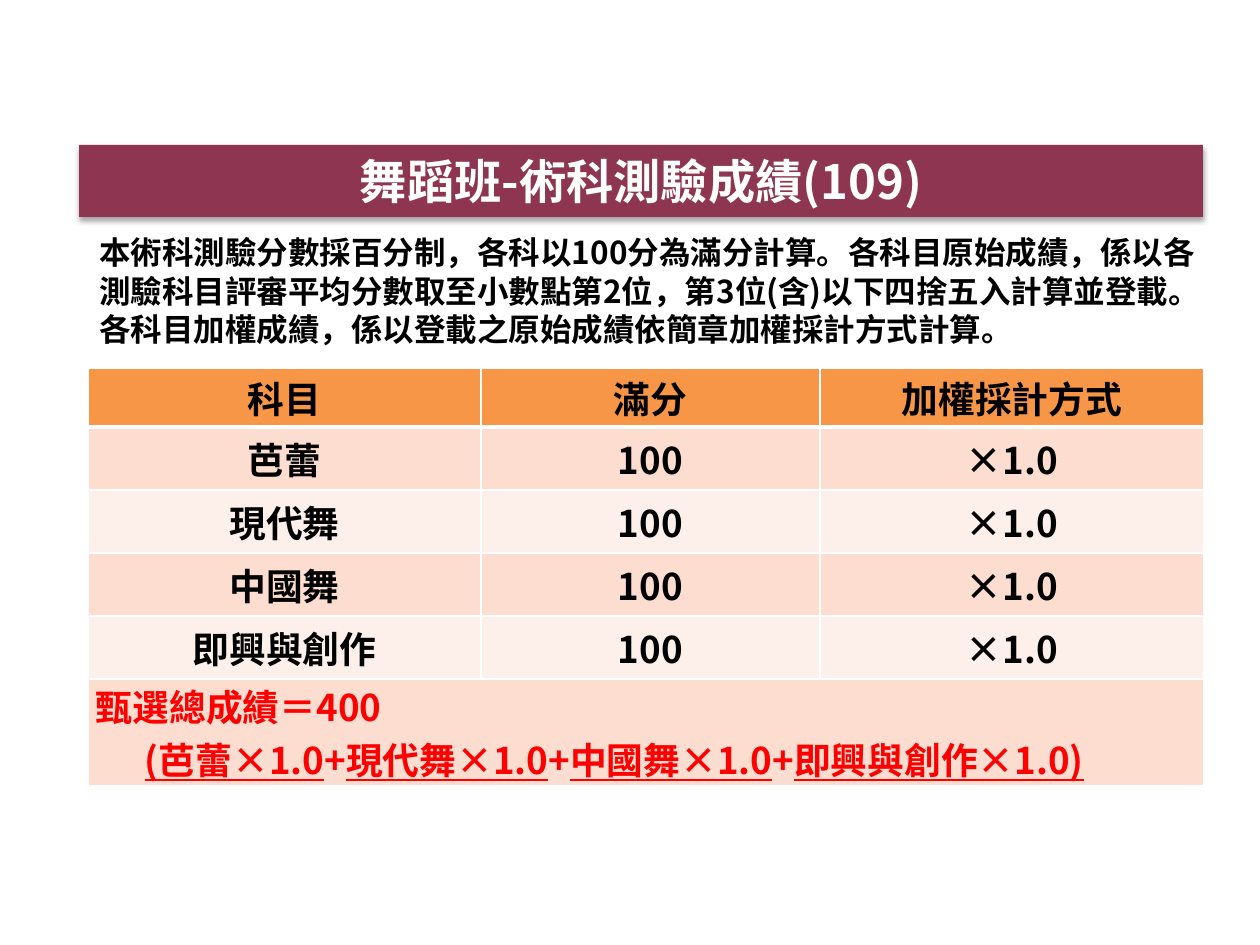
from dataclasses import dataclass

from lxml import etree
from pptx import Presentation
from pptx import util as u
from pptx.dml.color import RGBColor
from pptx.enum import text
from pptx.oxml import parse_xml
from pptx.oxml.ns import nsdecls, qn

EMU_PER_PX = 914400 / 126

TITLE = "舞蹈班-術科測驗成績(109)"
INTRO = (
    "本術科測驗分數採百分制，各科以100分為滿分計算。各科目原始成績，係以"
    "各測驗科目評審平均分數取至小數點第2位，第3位(含)以下四捨五入計算並登載。"
    "各科目加權成績，係以登載之原始成績依簡章加權採計方式計算。"
)
HEADER = ["科目", "滿分", "加權採計方式"]
SUBJECTS = ["芭蕾", "現代舞", "中國舞", "即興與創作"]
FULL_MARK, WEIGHT = "100", "×1.0"


def px(length):
    return u.Emu(round(length * EMU_PER_PX))


def color(hex_string):
    return RGBColor.from_string(hex_string)


@dataclass
class SlideBuilder:
    slide: object
    font: str = "Noto Sans CJK SC"
    black: str = "000000"
    white: str = "FFFFFF"
    red: str = "FF0000"
    banner: str = "8E3651"
    header: str = "F79646"
    bands: tuple = ("FCDDCF", "FDEFE9")

    def format_runs(self, paragraph, size, hex_string):
        for run in paragraph.runs:
            run.font.size = u.Pt(size)
            run.font.bold = True
            run.font.color.rgb = color(hex_string)
            run.font.name = self.font
            east_asian = etree.SubElement(run.font._element, qn("a:ea"))
            east_asian.set("typeface", self.font)

    def add_title(self, wording, left, top, width, height):
        title = self.slide.shapes.title
        title.left, title.top, title.width, title.height = map(px, (left, top, width, height))
        title.fill.solid()
        title.fill.fore_color.rgb = color(self.banner)
        title._element.spPr.append(parse_xml(
            f'<a:effectLst {nsdecls("a")}>'
            '<a:outerShdw blurRad="39370" dist="22860" dir="5400000" rotWithShape="0">'
            '<a:srgbClr val="000000"><a:alpha val="35000"/></a:srgbClr>'
            '</a:outerShdw></a:effectLst>'))
        frame = title.text_frame
        frame.text = wording
        frame.auto_size = text.MSO_AUTO_SIZE.NONE
        frame.vertical_anchor = text.MSO_ANCHOR.MIDDLE
        frame.paragraphs[0].alignment = text.PP_ALIGN.CENTER
        self.format_runs(frame.paragraphs[0], 27, self.white)

    def add_text(self, wording, left, top, width, height):
        box = self.slide.shapes.add_textbox(*map(px, (left, top, width, height)))
        frame = box.text_frame
        frame.word_wrap = True
        frame.text = wording
        frame.paragraphs[0].line_spacing = u.Pt(21.8)
        self.format_runs(frame.paragraphs[0], 18, self.black)

    def add_table(self, rows, left, top, column_widths, row_heights):
        """Add a header and banded rows; the last row is left empty and merged."""
        table = self.slide.shapes.add_table(
            len(row_heights), len(column_widths), px(left), px(top),
            px(sum(column_widths)), px(sum(row_heights))).table
        for column, width in zip(table.columns, column_widths):
            column.width = px(width)
        for index, height in enumerate(row_heights):
            table.rows[index].height = px(height)
            fill = self.bands[(index - 1) % 2] if index else self.header
            for cell in table.rows[index].cells:
                self.style_cell(cell, fill, bottom=1 if index else 3)
        for index, values in enumerate(rows):
            for cell, value in zip(table.rows[index].cells, values):
                cell.text = value
                paragraph = cell.text_frame.paragraphs[0]
                paragraph.alignment = text.PP_ALIGN.CENTER
                self.format_runs(paragraph, 21, self.black)
        last = len(row_heights) - 1
        table.cell(last, 0).merge(table.cell(last, len(column_widths) - 1))
        return table.cell(last, 0)

    def style_cell(self, cell, fill, bottom):
        cell.vertical_anchor = text.MSO_ANCHOR.MIDDLE
        cell.margin_left = cell.margin_right = px(8)
        cell.margin_top = cell.margin_bottom = 0
        properties = cell._tc.get_or_add_tcPr()
        for side, points in (("L", 1), ("R", 1), ("T", 1), ("B", bottom)):
            properties.append(parse_xml(
                f'<a:ln{side} {nsdecls("a")} w="{u.Pt(points)}"><a:solidFill>'
                f'<a:srgbClr val="{self.white}"/></a:solidFill></a:ln{side}>'))
        cell.fill.solid()
        cell.fill.fore_color.rgb = color(fill)

    def add_formula(self, cell, heading, terms, indent):
        """Write a heading line, then the underlined terms joined by plus signs."""
        frame = cell.text_frame
        frame.text = heading
        formula = frame.add_paragraph()
        formula._p.get_or_add_pPr().set("marL", str(px(indent)))
        for index, term in enumerate(terms):
            if index:
                formula.add_run().text = "+"
            run = formula.add_run()
            run.text = term
            run.font.underline = True
        for paragraph in frame.paragraphs:
            self.format_runs(paragraph, 21, self.red)


def main():
    presentation = Presentation()
    presentation.slide_width, presentation.slide_height = px(1260), px(945)
    slide = presentation.slides.add_slide(presentation.slide_layouts[5])
    builder = SlideBuilder(slide)

    rows = [HEADER] + [[subject, FULL_MARK, WEIGHT] for subject in SUBJECTS]
    total = builder.add_table(rows, 88, 368, [393, 339, 384], [59] + [63] * 4 + [103])
    terms = [subject + WEIGHT for subject in SUBJECTS]
    terms[0] = "(" + terms[0]
    terms[-1] += ")"
    builder.add_formula(total, "甄選總成績＝400", terms, indent=49)

    builder.add_title(TITLE, 79, 145, 1124, 72)
    builder.add_text(INTRO, 87, 227, 1131, 127)
    presentation.save("out.pptx")


if __name__ == "__main__":
    main()
